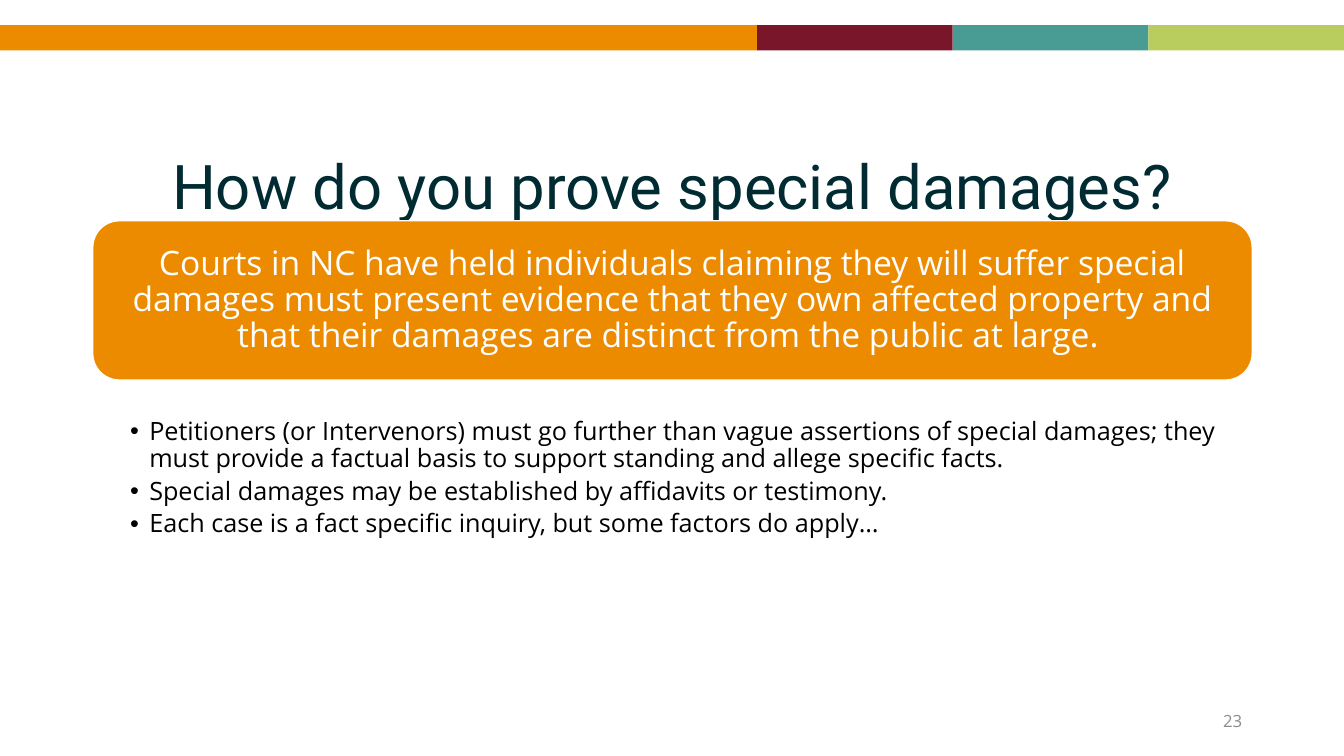
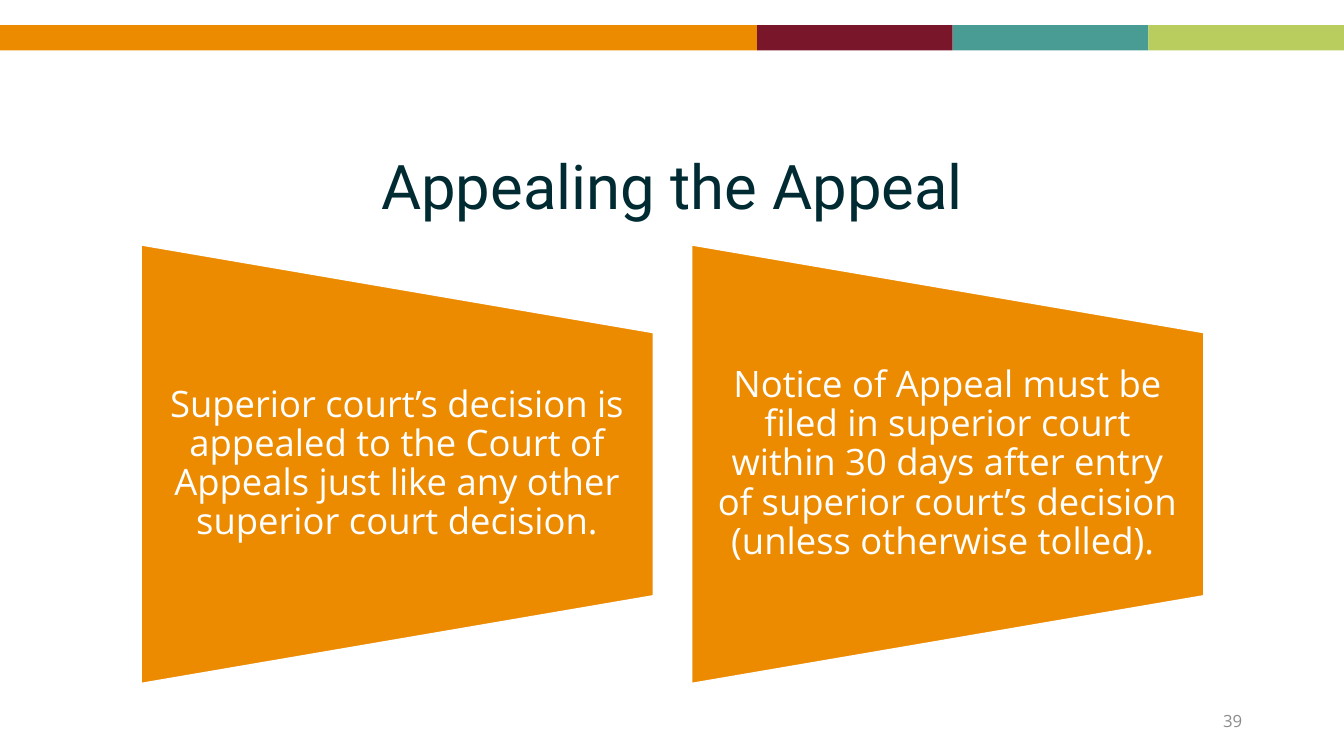
from pptx import Presentation
from pptx.dml.color import RGBColor
from pptx.enum.shapes import MSO_SHAPE
from pptx.enum.text import MSO_ANCHOR, MSO_AUTO_SIZE, PP_ALIGN
from pptx.util import Inches, Pt

RECT, ROUNDED = MSO_SHAPE.RECTANGLE, MSO_SHAPE.ROUNDED_RECTANGLE
TRAPEZOID = MSO_SHAPE.FLOWCHART_MANUAL_OPERATION
TOP, MIDDLE = MSO_ANCHOR.TOP, MSO_ANCHOR.MIDDLE
LEFT, CENTER, RIGHT = PP_ALIGN.LEFT, PP_ALIGN.CENTER, PP_ALIGN.RIGHT


class Theme:
    orange, maroon, teal, lime = "ED8B00", "79162A", "499C94", "B8CD5E"
    navy, black, white, gray = "012B32", "000000", "FFFFFF", "8C8C8C"
    heading, text = "Roboto", "Open Sans"
    title = dict(name=heading, size=Pt(44), color=navy)
    callout = dict(name=text, size=Pt(24), color=white)
    panel = dict(name=text, size=Pt(26), color=white)
    bullet = dict(name=text, size=Pt(18), color=black)
    number = dict(name=text, size=Pt(12), color=gray)


SLIDE_W, SLIDE_H = 13.33, 7.5
MARGIN, CONTENT_W = 0.92, 11.5
BAND_TOP, BAND_H = 0.25, 0.25
BANDS = [(Theme.orange, 7.51), (Theme.maroon, 1.94), (Theme.teal, 1.94), (Theme.lime, 1.94)]

DAMAGES = dict(
    title="How do you prove special damages?",
    number="23",
    callout="Courts in NC have held individuals claiming they will suffer special damages must "
            "present evidence that they own affected property and that their damages are "
            "distinct from the public at large. ",
    bullets=[
        "Petitioners (or Intervenors) must go further than vague assertions of special damages; "
        "they must provide a factual basis to support standing and allege specific facts.",
        "Special damages may be established by affidavits or testimony.",
        "Each case is a fact specific inquiry, but some factors do apply…",
    ],
)
APPEAL = dict(
    title="Appealing the Appeal",
    number="39",
    panels=[
        "Superior court’s decision is appealed to the Court of Appeals just like any other "
        "superior court decision.",
        "Notice of Appeal must be filed in superior court within 30 days after entry of "
        "superior court’s decision (unless otherwise tolled). ",
    ],
)


def place(shape, x, y, w, h):
    for side, value in dict(left=x, top=y, width=w, height=h).items():
        setattr(shape, side, Inches(value))


def write(shape, lines, style, align=CENTER, anchor=MIDDLE, insets=(0.1, 0.05, 0.1, 0.05),
          spacing=0.9, after=0, hang=0):
    """Fill a shape with one paragraph a line; hang is the bullet indent in inches."""
    tf = shape.text_frame
    tf.word_wrap = True
    tf.auto_size = MSO_AUTO_SIZE.NONE
    tf.vertical_anchor = anchor
    for side, inset in zip(("left", "top", "right", "bottom"), insets):
        setattr(tf, f"margin_{side}", Inches(inset))
    for i, line in enumerate(lines):
        p = tf.paragraphs[0] if i == 0 else tf.add_paragraph()
        if hang:
            pPr = p._p.get_or_add_pPr()
            pPr.set("marL", str(Inches(hang)))
            pPr.set("indent", str(-Inches(hang)))
        p.alignment, p.line_spacing = align, spacing
        p.space_before, p.space_after = Pt(0), Pt(after)
        r = p.add_run()
        r.text = line
        r.font.name, r.font.size = style["name"], style["size"]
        r.font.color.rgb = RGBColor.from_string(style["color"])


def add_box(s, kind, x, y, w, h, fill, line=None):
    sp = s.shapes.add_shape(kind, Inches(x), Inches(y), Inches(w), Inches(h))
    sp.shadow.inherit = False
    sp.fill.solid()
    sp.fill.fore_color.rgb = RGBColor.from_string(fill)
    if line:
        sp.line.color.rgb = RGBColor.from_string(line)
        sp.line.width = Pt(1)
    else:
        sp.line.fill.background()
    return sp


def add_text(s, x, y, w, h, text, style, **layout):
    sp = s.shapes.add_textbox(Inches(x), Inches(y), Inches(w), Inches(h))
    write(sp, [text], style, **layout)


def add_master_bands(prs, s):
    """Draw the colour bands on a slide, then move them behind everything on the master."""
    tree = prs.slide_master.shapes.element
    x = 0
    for i, (color, w) in enumerate(BANDS):
        band = add_box(s, RECT, x, BAND_TOP, w, BAND_H, color)
        tree.insert(2 + i, band.element)
        x += w


def add_slide(prs, layout, content):
    s = prs.slides.add_slide(prs.slide_layouts.get_by_name(layout))
    place(s.shapes.title, MARGIN, 1.16, CONTENT_W, 1.45)
    write(s.shapes.title, [content["title"]], Theme.title)
    add_text(s, 9.42, 6.95, 3, 0.4, content["number"], Theme.number, align=RIGHT, spacing=1)
    return s


def build_damages(prs):
    s = add_slide(prs, "Title and Content", DAMAGES)
    callout = add_box(s, ROUNDED, MARGIN, 2.19, CONTENT_W, 1.58, Theme.orange, Theme.white)
    write(callout, [DAMAGES["callout"]], Theme.callout, insets=(0.1, 0.1, 0.1, 0.1))
    body = s.placeholders[1]
    place(body, MARGIN, 4.12, CONTENT_W, 1.43)
    write(body, DAMAGES["bullets"], Theme.bullet, align=LEFT, anchor=TOP,
          insets=(0.37, 0.03, 0.14, 0.03), after=4, hang=0.19)
    return s


def build_appeal(prs):
    s = add_slide(prs, "Title Only", APPEAL)
    x, y, w, h, gap = 1.4, 2.43, 5.08, 4.35, 0.38
    text_h = 2.61
    middle = y + h / 2
    for text in APPEAL["panels"]:
        # Width and height swap because the panel is turned a quarter.
        panel = add_box(s, TRAPEZOID, x + (w - h) / 2, middle - w / 2, h, w,
                        Theme.orange, Theme.white)
        panel.rotation = 270
        add_text(s, x, middle - text_h / 2, w, text_h, text, Theme.panel,
                 insets=(0.18, 0, 0.18, 0))
        x += w + gap


def main():
    prs = Presentation()
    prs.slide_width, prs.slide_height = Inches(SLIDE_W), Inches(SLIDE_H)
    add_master_bands(prs, build_damages(prs))
    build_appeal(prs)
    prs.save("out.pptx")


if __name__ == "__main__":
    main()
